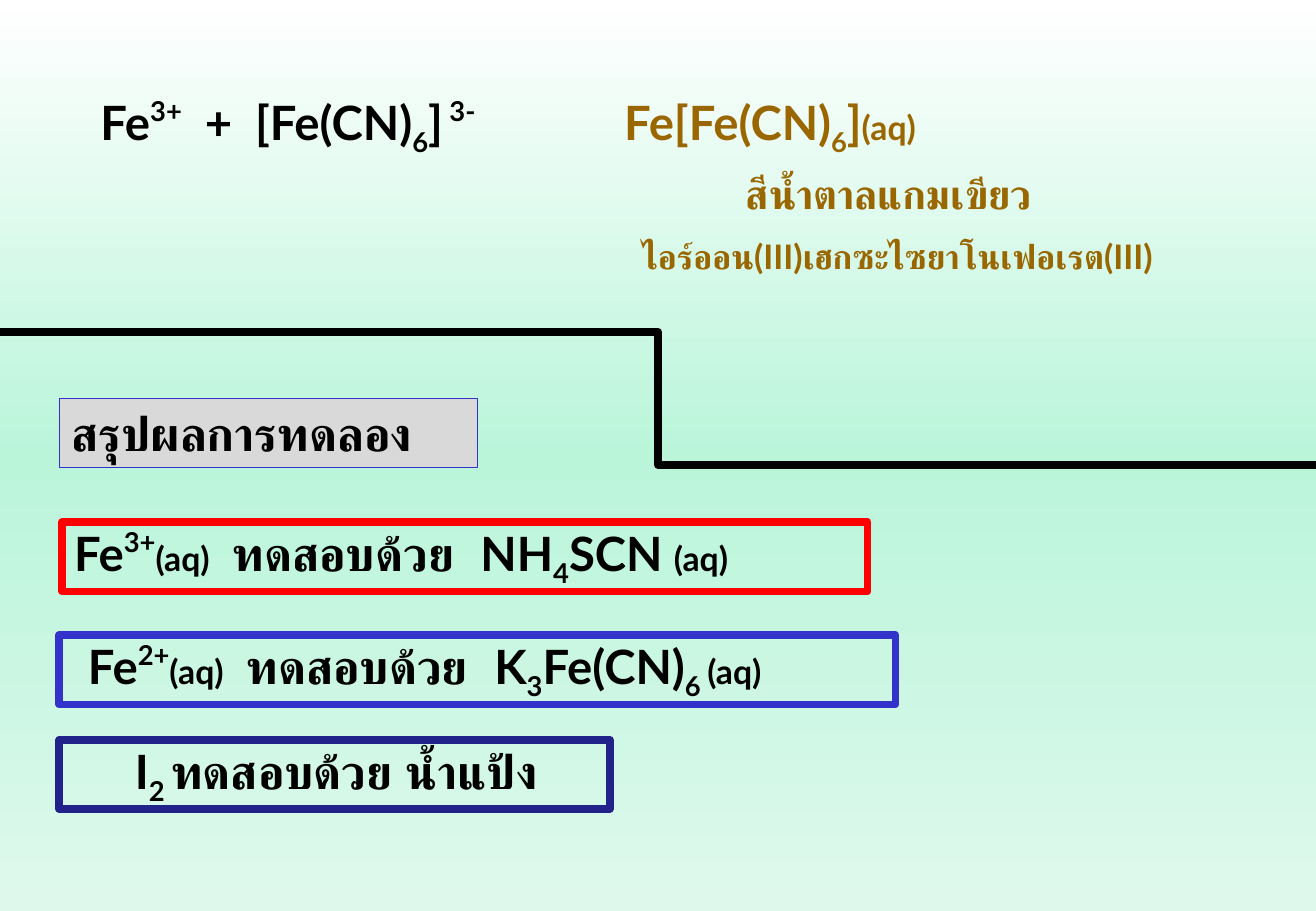
from copy import deepcopy

from pptx import Presentation
from pptx.dml.color import RGBColor as RGB
from pptx.enum.shapes import MSO_CONNECTOR as LINK, MSO_SHAPE as SHAPE
from pptx.enum.text import MSO_ANCHOR as ANCHOR, PP_ALIGN as ALIGN
from pptx.oxml.ns import qn
from pptx.util import Cm, Pt
from lxml.etree import SubElement

COLORS = {
    "black": "000000", "brown": "996600", "gray": "D9D9D9",
    "red": "FF0000", "blue": "3333CC", "navy": "22228B",
}
BACK = [(0, "FFFFFF"), (0.5, "BAF5DA"), (1, "DEF9EC")]
FONT = "Lato"
WIDTH, HEIGHT = 27.51, 19.05
BASE = {"up": "40000", "low": "-25000"}
ROW = 1.45  # height of a line of 28 pt text with its margins

HEAD = "สรุปผลการทดลอง"

# left, top, width, height, size, color, runs
NOTES = [
    (1.85, 1.83, 9, ROW, 28, "black",
     [("Fe",), ("3+", "up"), ("  +  [Fe(CN)",), ("6", "low"), ("]",),
      (" 3-", "up")]),
    (12.8, 1.83, 12, ROW, 28, "brown",
     [("Fe[Fe(CN)",), ("6", "low"), ("]",), ("(aq)", "small")]),
    (15.34, 3.4, 7.34, 1.27, 24, "brown", [("สีน้ำตาลแกมเขียว",)]),
    (13.17, 4.8, 12.5, 1.12, 20, "brown",
     [("ไอร์ออน(III)เฮกซะไซยาโนเฟอเรต(III)",)]),
]

# left, top, width, indent, color, runs
TESTS = [
    (1.3, 10.92, 16.84, 0.25, "red",
     [("Fe",), ("3+", "up"), ("(aq)", "small"), ("  ทดสอบด้วย  NH",),
      ("4", "low"), ("SCN ",), ("(aq)", "small")]),
    (1.24, 13.28, 17.48, 0.6, "blue",
     [("Fe",), ("2+", "up"), ("(aq)", "small"), ("  ทดสอบด้วย  K",),
      ("3", "low"), ("Fe(CN)",), ("6 ", "low"), ("(aq)", "small")]),
    (1.24, 15.47, 11.51, 1.58, "navy",
     [("I",), ("2 ", "low"), ("ทดสอบด้วย น้ำแป้ง",)]),
]


def color(name):
    return RGB.from_string(COLORS[name])


def style(run, size, tint, kind=""):
    font = run.font
    font.name, font.bold = FONT, True
    font.size = Pt(20 if kind == "small" else size)
    font.color.rgb = color(tint)
    if kind in BASE:
        run._r.get_or_add_rPr().set("baseline", BASE[kind])


def write(shape, runs, size, tint, indent=0.25):
    frame = shape.text_frame
    frame.word_wrap = True
    frame.margin_left = Cm(indent)
    par = frame.paragraphs[0]
    par.alignment = ALIGN.LEFT
    for text, *kind in runs:
        run = par.add_run()
        run.text = text
        style(run, size, tint, *kind)


def paint(slide):
    """Give the slide its three-stop vertical gradient."""
    fill = slide.background.fill
    fill.gradient()
    fill.gradient_angle = 270
    stops = slide._element.find(".//" + qn("a:gsLst"))
    stops.append(deepcopy(stops[0]))
    for stop, (pos, tint) in zip(fill.gradient_stops, BACK):
        stop.position = pos
        stop.color.rgb = RGB.from_string(tint)


def add_head(slide):
    head = slide.shapes.title
    head.left, head.top, head.width, head.height = (
        Cm(1.24), Cm(8.33), Cm(8.74), Cm(ROW))
    head.fill.solid()
    head.fill.fore_color.rgb = color("gray")
    head.line.color.rgb = color("blue")
    head.line.width = Pt(0.75)
    head.text_frame.vertical_anchor = ANCHOR.TOP
    write(head, [(HEAD,)], 28, "black")


def add_step(slide):
    """Draw the stepped line that parts reaction and summary."""
    step = slide.shapes.add_connector(
        LINK.ELBOW, 0, Cm(6.94), Cm(WIDTH), Cm(9.72))
    step.line.color.rgb = color("black")
    step.line.width = Pt(4.5)
    SubElement(step._element.spPr, qn("a:effectLst"))


def add_test(slide, left, top, width, indent, tint, runs):
    box = slide.shapes.add_shape(
        SHAPE.RECTANGLE, Cm(left), Cm(top), Cm(width), Cm(ROW))
    box.shadow.inherit = False
    box.fill.background()
    box.line.color.rgb = color(tint)
    box.line.width = Pt(4.5)
    box.text_frame.vertical_anchor = ANCHOR.MIDDLE
    write(box, runs, 28, "black", indent)


def main():
    deck = Presentation()
    deck.slide_width, deck.slide_height = Cm(WIDTH), Cm(HEIGHT)
    slide = deck.slides.add_slide(deck.slide_layouts[5])
    paint(slide)
    for left, top, width, height, size, tint, runs in NOTES:
        note = slide.shapes.add_textbox(
            Cm(left), Cm(top), Cm(width), Cm(height))
        write(note, runs, size, tint)
    add_head(slide)
    for test in TESTS:
        add_test(slide, *test)
    add_step(slide)
    deck.save("out.pptx")


if __name__ == "__main__":
    main()
